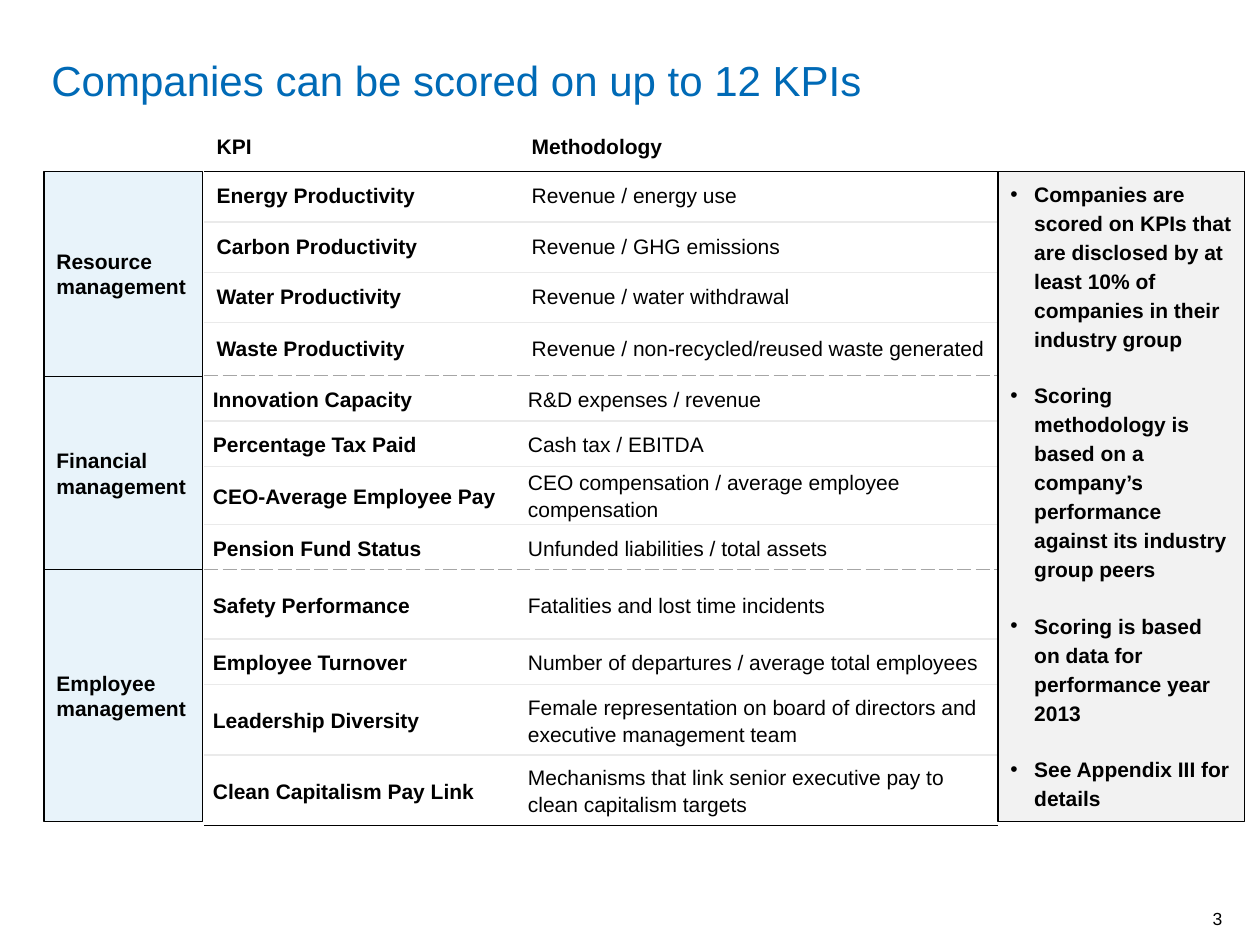
from lxml import etree
from pptx import Presentation, util as u
from pptx.dml.color import RGBColor
from pptx.enum import shapes, text
from pptx.oxml import ns

BLUE = RGBColor(0x00, 0x6A, 0xB6)
BLACK = RGBColor(0, 0, 0)
PALE_BLUE = RGBColor(0xE8, 0xF3, 0xFA)
PALE_GREY = RGBColor(0xF2, 0xF2, 0xF2)
RULE_GREY = RGBColor(0xEA, 0xEA, 0xEA)
DASH_GREY = RGBColor(0xA6, 0xA6, 0xA6)

TOP, MIDDLE, BOTTOM = (text.MSO_ANCHOR.TOP, text.MSO_ANCHOR.MIDDLE,
                       text.MSO_ANCHOR.BOTTOM)
FRAME_RULE = (BLACK, 0.75, "solid")
ROW_RULE = (RULE_GREY, 1, "solid")
GROUP_RULE = (DASH_GREY, 0.75, "sysDash")

HEADERS = ("KPI", "Methodology")
COLUMN_WIDTHS = (2.5, 3.8)
HEADER_HEIGHT = 0.4
GROUPS = [
    ("Resource management", 1.63, [
        ("Energy Productivity", "Revenue / energy use", 0.4),
        ("Carbon Productivity", "Revenue / GHG emissions", 0.4),
        ("Water Productivity", "Revenue / water withdrawal", 0.4),
        ("Waste Productivity",
         "Revenue / non-recycled/reused waste generated", 0.42),
    ]),
    ("Financial management", 1.53, [
        ("Innovation Capacity", "R&D expenses / revenue", 0.36),
        ("Percentage Tax Paid", "Cash tax / EBITDA", 0.36),
        ("CEO-Average Employee Pay",
         "CEO compensation / average employee compensation", 0.46),
        ("Pension Fund Status", "Unfunded liabilities / total assets", 0.36),
    ]),
    ("Employee management", 2.0, [
        ("Safety Performance", "Fatalities and lost time incidents", 0.55),
        ("Employee Turnover",
         "Number of departures / average total employees", 0.36),
        ("Leadership Diversity",
         "Female representation on board of directors and "
         "executive management team", 0.56),
        ("Clean Capitalism Pay Link",
         "Mechanisms that link senior executive pay to "
         "clean capitalism targets", 0.56),
    ]),
]
NOTES = [
    "Companies are scored on KPIs that are disclosed by at least 10% of "
    "companies in their industry group",
    "Scoring methodology is based on a company’s performance against its "
    "industry group peers",
    "Scoring is based on data for performance year 2013",
    "See Appendix III for details",
]


def add_bullet(paragraph):
    properties = paragraph._p.get_or_add_pPr()
    properties.set("marL", str(u.Inches(0.19)))
    properties.set("indent", str(u.Inches(-0.19)))
    etree.SubElement(properties, ns.qn("a:buFont"), typeface="Arial")
    etree.SubElement(properties, ns.qn("a:buChar"), char="•")


def write(frame, *lines, size=12, color=BLACK, bold=False, anchor=TOP,
          align=text.PP_ALIGN.LEFT, spacing=1.0, gap=0, bullets=False):
    frame.word_wrap = True
    frame.vertical_anchor = anchor
    for index, line in enumerate(lines):
        paragraph = frame.add_paragraph() if index else frame.paragraphs[0]
        paragraph.alignment = align
        paragraph.line_spacing = spacing
        paragraph.space_before = u.Pt(gap if index else 0)
        if bullets:
            add_bullet(paragraph)
        run = paragraph.add_run()
        run.text = line
        run.font.name = "Arial"
        run.font.size = u.Pt(size)
        run.font.bold = bold
        run.font.color.rgb = color


def add_label(slide, box, *lines, inset=None, **style):
    frame = slide.shapes.add_textbox(*map(u.Inches, box)).text_frame
    if inset is not None:
        frame.margin_left = frame.margin_right = u.Inches(inset)
        frame.margin_top = frame.margin_bottom = u.Inches(inset)
    write(frame, *lines, **style)


def add_panel(slide, box, fill, *lines, **style):
    panel = slide.shapes.add_shape(shapes.MSO_SHAPE.RECTANGLE,
                                   *map(u.Inches, box))
    panel.shadow.inherit = False
    panel.fill.solid()
    panel.fill.fore_color.rgb = fill
    panel.line.color.rgb = BLACK
    panel.line.width = u.Pt(0.75)
    write(panel.text_frame, *lines, bold=True, **style)


def set_borders(cell, top, bottom):
    properties = cell._tc.get_or_add_tcPr()
    rules = {"lnL": None, "lnR": None, "lnT": top, "lnB": bottom}
    for side, rule in rules.items():
        line = etree.SubElement(properties, ns.qn(f"a:{side}"))
        if rule is None:
            etree.SubElement(line, ns.qn("a:noFill"))
            continue
        color, width, dash = rule
        line.set("w", str(u.Pt(width)))
        fill = etree.SubElement(line, ns.qn("a:solidFill"))
        etree.SubElement(fill, ns.qn("a:srgbClr"), val=str(color))
        etree.SubElement(line, ns.qn("a:prstDash"), val=dash)


def fill_cell(cell, words, top, bottom, side_inset, end_inset, **style):
    set_borders(cell, top, bottom)
    cell.fill.background()
    cell.margin_left = cell.margin_right = u.Inches(side_inset)
    cell.margin_top = cell.margin_bottom = u.Inches(end_inset)
    write(cell.text_frame, words, **style)
    cell.vertical_anchor = style["anchor"]


def add_kpi_table(slide, left, top):
    heights = [HEADER_HEIGHT] + [row[2] for group in GROUPS
                                 for row in group[2]]
    box = (left, top, sum(COLUMN_WIDTHS), sum(heights))
    table = slide.shapes.add_table(len(heights), len(COLUMN_WIDTHS),
                                   *map(u.Inches, box)).table
    table.first_row = table.horz_banding = False
    for column, width in zip(table.columns, COLUMN_WIDTHS):
        column.width = u.Inches(width)
    for row, height in zip(table.rows, heights):
        row.height = u.Inches(height)

    for column, header in enumerate(HEADERS):
        fill_cell(table.cell(0, column), header, None, FRAME_RULE, 0.1, 0.1,
                  bold=True, anchor=BOTTOM)
    row = 1
    above = FRAME_RULE
    for group, (_, _, kpis) in enumerate(GROUPS):
        side_inset, end_inset, spacing = ((0.07, 0, 1.15) if group
                                          else (0.1, 0.1, 1.0))
        closing = FRAME_RULE if group == len(GROUPS) - 1 else GROUP_RULE
        for index, kpi in enumerate(kpis):
            below = closing if index == len(kpis) - 1 else ROW_RULE
            for column, words in enumerate(kpi[:2]):
                fill_cell(table.cell(row, column), words, above, below,
                          side_inset, end_inset, bold=column == 0,
                          anchor=MIDDLE, spacing=spacing)
            above = below
            row += 1


def add_group_panels(slide, left, top, width):
    for name, height, _ in GROUPS:
        add_panel(slide, (left, top, width, height), PALE_BLUE, name,
                  anchor=MIDDLE)
        top += height


def main():
    presentation = Presentation()
    presentation.slide_width = u.Inches(10)
    presentation.slide_height = u.Inches(7.5)
    slide = presentation.slides.add_slide(presentation.slide_layouts[6])
    body_top = 1.36
    body_height = sum(group[1] for group in GROUPS)
    add_label(slide, (8.93, 7.17, 0.77, 0.2), "3", inset=0, size=10,
              anchor=BOTTOM, align=text.PP_ALIGN.RIGHT)
    add_kpi_table(slide, 1.62, body_top - HEADER_HEIGHT)
    add_group_panels(slide, 0.35, body_top, 1.26)
    add_panel(slide, (7.92, body_top, 1.96, body_height), PALE_GREY, *NOTES,
              spacing=1.15, gap=15.8, bullets=True)
    add_label(slide, (0.31, 0.38, 8.23, 0.9),
              "Companies can be scored on up to 12 KPIs", size=24, color=BLUE)
    presentation.save("out.pptx")


if __name__ == "__main__":
    main()
